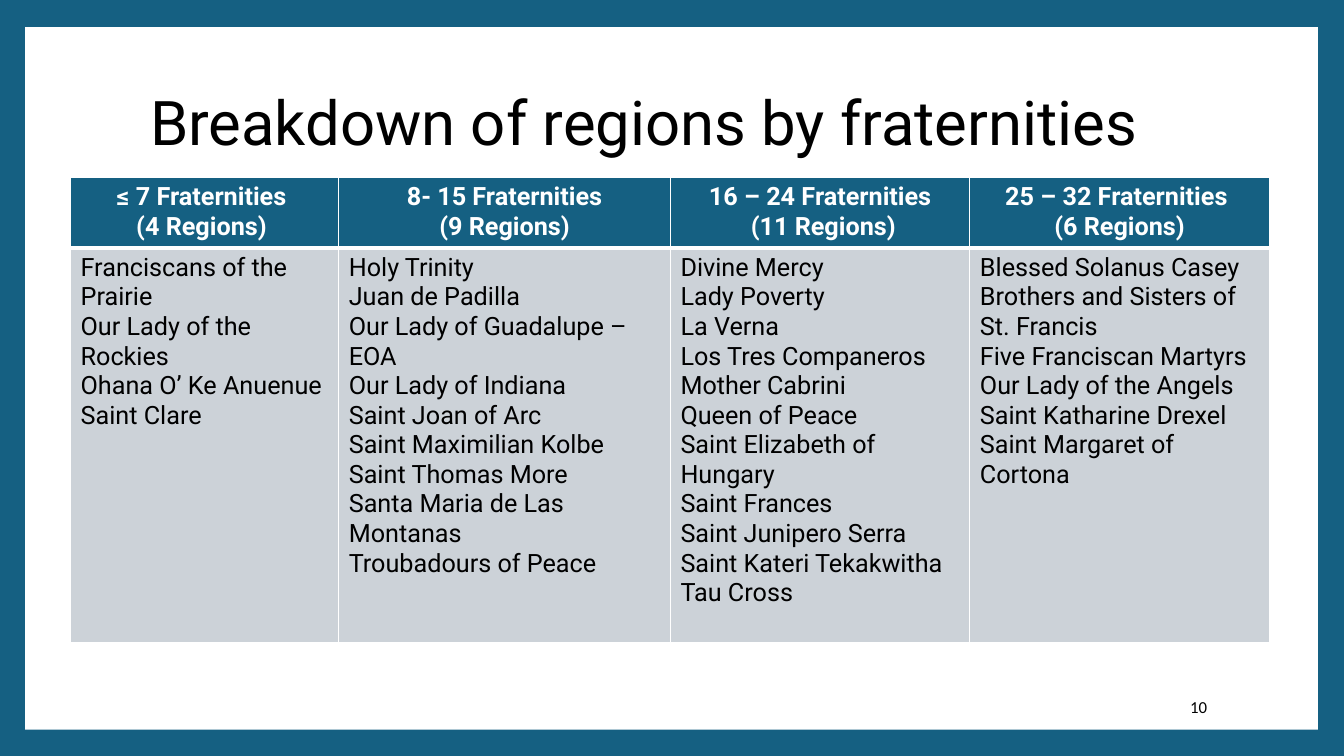
"""Builds the slide that groups regions by their number of fraternities."""
import pptx
import pptx.util
import pptx.dml.color
import pptx.enum.shapes
import pptx.enum.text
import pptx.oxml
import pptx.oxml.ns

Inches = pptx.util.Inches
Align = pptx.enum.text.PP_ALIGN
Anchor = pptx.enum.text.MSO_ANCHOR

BLUE, GREY, WHITE, BLACK = "156082", "CCD2D8", "FFFFFF", "000000"
TITLE = {"size": pptx.util.Pt(44), "name": "Roboto"}
NUMBER = {"size": pptx.util.Pt(12), "name": "Calibri"}
HEAD = {"size": pptx.util.Pt(18), "name": "Roboto", "bold": True}
BODY = {**HEAD, "bold": False}

GROUPS = [
    (2.66, ["≤ 7 Fraternities ", "(4 Regions) "],
     ["Franciscans of the Prairie", "Our Lady of the Rockies",
      "Ohana O’ Ke Anuenue", "Saint Clare"]),
    (3.29, [" 8- 15 Fraternities ", "(9 Regions)"],
     ["Holy Trinity", "Juan de Padilla", "Our Lady of Guadalupe – EOA",
      "Our Lady of Indiana", "Saint Joan of Arc", "Saint Maximilian Kolbe",
      "Saint Thomas More", "Santa Maria de Las Montanas",
      "Troubadours of Peace"]),
    (2.97, ["16 – 24 Fraternities", " (11 Regions)"],
     ["Divine Mercy", "Lady Poverty", "La Verna", "Los Tres Companeros",
      "Mother Cabrini", "Queen of Peace", "Saint Elizabeth of Hungary",
      "Saint Frances", "Saint Junipero Serra", "Saint Kateri Tekakwitha",
      "Tau Cross"]),
    (2.97, ["25 – 32 Fraternities ", "(6 Regions)"],
     ["Blessed Solanus Casey", "Brothers and Sisters of St. Francis",
      "Five Franciscan Martyrs", "Our Lady of the Angels",
      "Saint Katharine Drexel", "Saint Margaret of Cortona"]),
]


def paint(fill, shade):
    """Fill with a solid colour given as a hex string."""
    fill.solid()
    fill.fore_color.rgb = pptx.dml.color.RGBColor.from_string(shade)


def write(frame, lines, style, shade, align):
    """Write one paragraph per line in the given style."""
    frame.text = "\n".join(lines)
    for para in frame.paragraphs:
        para.alignment = align
        for run in para.runs:
            for key, value in style.items():
                setattr(run.font, key, value)
            paint(run.font.fill, shade)


def add_panel(slide, *box):
    """Add the white panel inside the blue frame."""
    kind = pptx.enum.shapes.MSO_SHAPE.RECTANGLE
    panel = slide.shapes.add_shape(kind, *map(Inches, box))
    panel.shadow.inherit = False
    paint(panel.fill, WHITE)
    panel.line.fill.background()


def add_label(slide, box, text, style, align):
    """Add a vertically centred line of black text."""
    frame = slide.shapes.add_textbox(*map(Inches, box)).text_frame
    frame.word_wrap = True
    frame.vertical_anchor = Anchor.MIDDLE
    write(frame, [text], style, BLACK, align)
    frame.paragraphs[0].line_spacing = 0.9 if style is TITLE else 1.0


def add_edges(cell, bottom):
    """Draw white cell borders with the given bottom width in points."""
    props = cell._tc.get_or_add_tcPr()
    for side, width in zip("LRTB", (1, 1, bottom[0], bottom[1])):
        props.append(pptx.oxml.parse_xml(
            f'<a:ln{side} {pptx.oxml.ns.nsdecls("a")} w="{pptx.util.Pt(width)}">'
            f'<a:solidFill><a:srgbClr val="{WHITE}"/></a:solidFill></a:ln{side}>'))


def fill_cell(cell, lines, style, ink, shade, align, edges):
    """Set the text, borders and fill of one cell."""
    write(cell.text_frame, lines, style, ink, align)
    add_edges(cell, edges)
    paint(cell.fill, shade)


def add_groups(slide, left, top, heights):
    """Add the table with one column per group of regions."""
    width = sum(group[0] for group in GROUPS)
    box = map(Inches, (left, top, width, sum(heights)))
    table = slide.shapes.add_table(2, len(GROUPS), *box).table
    for row, height in zip(table.rows, heights):
        row.height = Inches(height)
    for col, (wide, head, names) in enumerate(GROUPS):
        table.columns[col].width = Inches(wide)
        fill_cell(table.cell(0, col), head, HEAD, WHITE, BLUE,
                  Align.CENTER, (1, 3))
        fill_cell(table.cell(1, col), names, BODY, BLACK, GREY,
                  Align.LEFT, (3, 1))


def main():
    """Build the slide and save it."""
    deck = pptx.Presentation()
    deck.slide_width, deck.slide_height = Inches(13.33), Inches(7.5)
    slide = deck.slides.add_slide(deck.slide_layouts[6])
    paint(slide.background.fill, BLUE)
    add_panel(slide, 0.25, 0.27, 12.82, 6.97)
    add_label(slide, (1.39, 0.51, 10.8, 1.48),
              "Breakdown of regions by fraternities", TITLE, Align.LEFT)
    add_label(slide, (10.2, 6.81, 1.87, 0.4), "10", NUMBER, Align.RIGHT)
    add_groups(slide, 0.7, 1.76, (0.68, 3.91))
    deck.save("out.pptx")


if __name__ == "__main__":
    main()
